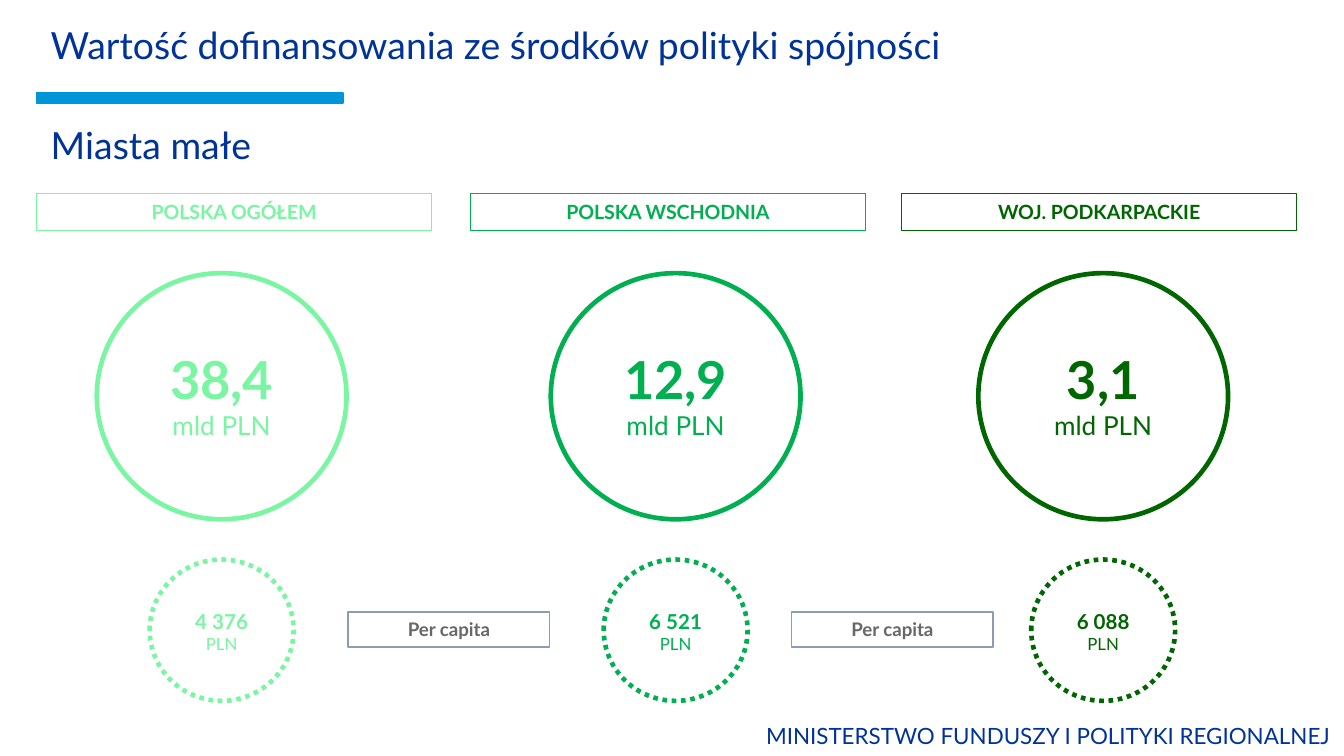
from pptx import Presentation
from pptx.dml.color import RGBColor
from pptx.enum.dml import MSO_LINE_DASH_STYLE as Dash
from pptx.enum.shapes import MSO_SHAPE as Shape
from pptx.enum.text import MSO_ANCHOR as Anchor, PP_ALIGN as Align
from pptx.util import Cm, Pt

FONT = "Lato"
NAVY = RGBColor(0x00, 0x33, 0x99)
BLUE = RGBColor(0x00, 0x95, 0xD8)
LIGHT_GREEN = RGBColor(0x7A, 0xF6, 0xA3)
GREEN = RGBColor(0x00, 0xB0, 0x50)
DARK_GREEN = RGBColor(0x00, 0x66, 0x00)
GREY = RGBColor(0x67, 0x67, 0x69)
SLATE = RGBColor(0x8B, 0x9E, 0xAF)

LABEL_W, LABEL_H = 7.47, 0.69
CAPITA_W, CAPITA_H = 3.81, 0.66

# label left, circle centre, colour, label, total in billions, per capita
REGIONS = [
    (0.69, 4.19, LIGHT_GREEN, "POLSKA OGÓŁEM", "38,4", "4 376"),
    (8.89, 12.77, GREEN, "POLSKA WSCHODNIA", "12,9", "6 521"),
    (17.04, 20.85, DARK_GREEN, "WOJ. PODKARPACKIE", "3,1", "6 088"),
]
CAPITA_LEFTS = (6.58, 14.96)


def write(shape, lines, color, align=Align.CENTER, anchor=Anchor.MIDDLE):
    """Fill a shape with paragraphs given as (text, size, bold)."""
    frame = shape.text_frame
    frame.word_wrap = True
    frame.vertical_anchor = anchor
    for index, (text, size, bold) in enumerate(lines):
        paragraph = frame.add_paragraph() if index else frame.paragraphs[0]
        paragraph.text = text
        paragraph.alignment = align
        font = paragraph.font
        font.name, font.size, font.bold = FONT, Pt(size), bold
        font.color.rgb = color


def add_text(parent, left, top, width, height, lines, color, **layout):
    box = parent.add_textbox(Cm(left), Cm(top), Cm(width), Cm(height))
    write(box, lines, color, **layout)


def add_outline(parent, kind, left, top, width, height, color, weight):
    outline = parent.add_shape(kind, Cm(left), Cm(top), Cm(width), Cm(height))
    outline.shadow.inherit = False
    outline.fill.background()
    outline.line.color.rgb = color
    outline.line.width = Pt(weight)
    return outline


def add_label(parent, left, top, width, height, text, size, line_color, text_color):
    label = add_outline(parent, Shape.RECTANGLE, left, top, width, height, line_color, 0)
    write(label, [(text, size, True)], text_color)


def add_circle(parent, centre, top, width, height, color, lines, text_box):
    """Draw a ring with a text box centred on it; text_box is (top, width, height)."""
    ring = add_outline(parent, Shape.OVAL, centre - width / 2, top, width, height, color, 2.5)
    text_top, text_w, text_h = text_box
    add_text(parent, centre - text_w / 2, text_top, text_w, text_h, lines, color,
             anchor=Anchor.TOP)
    return ring


def add_header(slide, left, top, width):
    shapes = slide.shapes
    # Accent bar
    bar = add_outline(shapes, Shape.RECTANGLE, left, top + 1.8, 5.79, 0.2, BLUE, 1)
    bar.fill.solid()
    bar.fill.fore_color.rgb = BLUE
    # Title and subtitle
    add_text(shapes, left + 0.02, top, width, 1.8,
             [("Wartość dofinansowania ze środków polityki spójności", 20, False)],
             NAVY, align=Align.LEFT)
    add_text(shapes, left + 0.02, top + 1.98, 17.6, 1.6, [("Miasta małe", 20, False)],
             NAVY, align=Align.LEFT)


def add_region(slide, left, top, centre, color, name, total, per_capita):
    shapes = slide.shapes
    add_label(shapes, left, top, LABEL_W, LABEL_H, name, 10.5, color, color)
    # Total funding
    add_circle(shapes, centre, top + 1.5, 4.72, 4.65, color,
               [(total, 28, True), ("mld PLN", 14, False)], (top + 2.77, 3.33, 2.03))
    # Funding per capita
    group = slide.shapes.add_group_shape()
    ring = add_circle(group.shapes, centre, top + 6.91, 2.72, 2.67, color,
                      [(per_capita, 11, True), ("PLN", 9, False)], (top + 7.72, 1.68, 1.09))
    ring.line.dash_style = Dash.ROUND_DOT


def add_footer(slide, left, top, width, height):
    add_text(slide.shapes, left, top, width, height,
             [("MINISTERSTWO FUNDUSZY I POLITYKI REGIONALNEJ", 12, False)],
             NAVY, align=Align.RIGHT)


def main():
    deck = Presentation()
    deck.slide_width, deck.slide_height = Cm(25.4), Cm(14.28)
    slide = deck.slides.add_slide(deck.slide_layouts[6])

    add_header(slide, 0.69, -0.05, 23.98)
    for left, *region in REGIONS:
        add_region(slide, left, 3.66, *region)
    # Captions between the per capita circles
    for left in CAPITA_LEFTS:
        add_label(slide.shapes, left, 11.56, CAPITA_W, CAPITA_H, "Per capita", 10, SLATE, GREY)
    add_footer(slide, 11.61, 13.49, 13.79, 0.81)

    deck.save("out.pptx")


if __name__ == "__main__":
    main()
